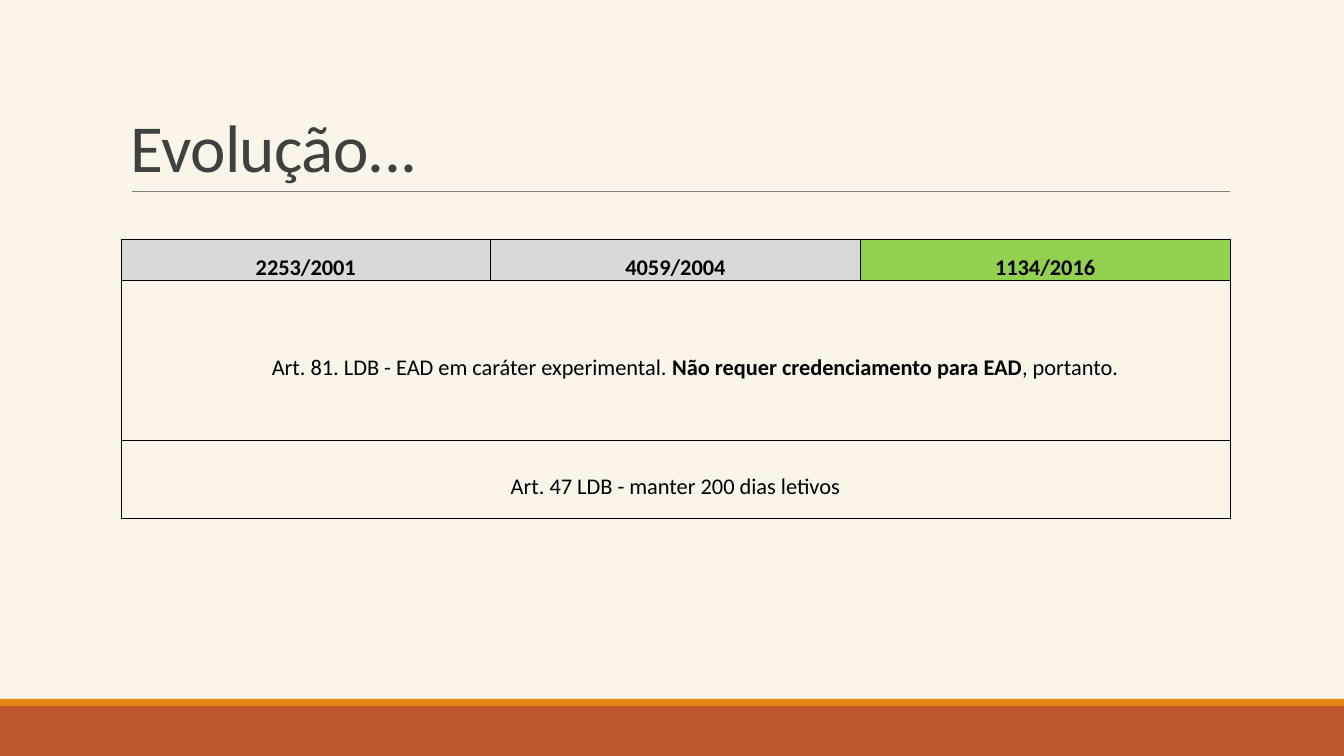
"""Build the slide comparing three ordinances under a title."""
from lxml import etree
from pptx import Presentation, util as u
from pptx.dml.color import RGBColor
from pptx.enum import shapes, text
from pptx.oxml.ns import qn

BACKGROUND = RGBColor(0xFA, 0xF5, 0xE8)
RUST = RGBColor(0xBD, 0x58, 0x2C)
ORANGE = RGBColor(0xE4, 0x83, 0x12)
RULE_GRAY = RGBColor(0x80, 0x80, 0x80)
TITLE_GRAY = RGBColor(0x40, 0x40, 0x40)
HEADER_GRAY = RGBColor(0xD9, 0xD9, 0xD9)
HEADER_GREEN = RGBColor(0x92, 0xD0, 0x50)
BLACK = RGBColor(0, 0, 0)

TITLE = "Evolução..."
HEADERS = [("2253/2001", HEADER_GRAY), ("4059/2004", HEADER_GRAY), ("1134/2016", HEADER_GREEN)]
ARTICLES = [
    {"indent": 39, "runs": [("Art. 81. LDB - EAD em caráter experimental. ", False),
                            ("Não requer credenciamento para EAD", True),
                            (", portanto.", False)]},
    {"indent": 0, "runs": [("Art. 47 LDB - manter 200 dias letivos", False)]},
]
BANDS = [(706, 50, RUST), (699, 7, ORANGE)]
ROW_HEIGHTS = [39, 160, 78]
LEFT, WIDTH, TABLE_TOP = 121, 1109, 239
TITLE_FORMAT = {"name": "Calibri", "size": u.Pt(48)}
CELL_FORMAT = {"name": "Calibri", "size": u.Pt(16)}
SCALE = 914400 / 100.8


def px(length):
    return u.Emu(round(length * SCALE))


def set_attributes(target, values):
    for name, value in values.items():
        setattr(target, name, value)


def add_run(paragraph, words, font_format, color):
    run = paragraph.add_run()
    run.text = words
    set_attributes(run.font, font_format)
    run.font.color.rgb = color
    return run


def add_borders(cell):
    properties = cell._tc.get_or_add_tcPr()
    for side in ("lnL", "lnR", "lnT", "lnB"):
        border = etree.SubElement(properties, qn(f"a:{side}"), w=str(u.Pt(0.5)))
        fill = etree.SubElement(border, qn("a:solidFill"))
        etree.SubElement(fill, qn("a:srgbClr"), val=str(BLACK))


def fill_cell(cell, runs, indent=0):
    set_attributes(cell, {"vertical_anchor": text.MSO_ANCHOR.MIDDLE, "margin_left": px(1),
                          "margin_right": px(1), "margin_top": px(1), "margin_bottom": 0})
    paragraph = cell.text_frame.paragraphs[0]
    set_attributes(paragraph, {"alignment": text.PP_ALIGN.CENTER, "line_spacing": 1.5})
    paragraph._p.get_or_add_pPr().set("marL", str(px(indent)))
    for words, bold in runs:
        add_run(paragraph, words, {**CELL_FORMAT, "bold": bold}, BLACK)


def add_background(slide):
    slide.background.fill.solid()
    slide.background.fill.fore_color.rgb = BACKGROUND
    for top, height, color in BANDS:
        band = slide.shapes.add_shape(shapes.MSO_SHAPE.RECTANGLE, 0, px(top), px(1344), px(height))
        band.shadow.inherit = False
        band.fill.solid()
        band.fill.fore_color.rgb = color
        band.line.fill.background()
    rule = slide.shapes.add_connector(shapes.MSO_CONNECTOR.STRAIGHT,
                                      px(132), px(191), px(1230), px(191))
    rule.line.color.rgb = RULE_GRAY
    rule.line.width = u.Pt(0.5)
    etree.SubElement(rule._element.spPr, qn("a:effectLst"))


def add_title(slide):
    frame = slide.shapes.add_textbox(px(LEFT), px(31), px(WIDTH), px(160)).text_frame
    set_attributes(frame, {"word_wrap": True, "vertical_anchor": text.MSO_ANCHOR.BOTTOM})
    paragraph = frame.paragraphs[0]
    paragraph.line_spacing = 0.85
    run = add_run(paragraph, TITLE, TITLE_FORMAT, TITLE_GRAY)
    run._r.get_or_add_rPr().set("spc", "-50")


def add_table(slide):
    table = slide.shapes.add_table(len(ROW_HEIGHTS), len(HEADERS), px(LEFT), px(TABLE_TOP),
                                   px(WIDTH), px(sum(ROW_HEIGHTS))).table
    set_attributes(table, {"first_row": False, "horz_banding": False})
    for column in table.columns:
        column.width = px(WIDTH / len(HEADERS))
    for row, height in zip(table.rows, ROW_HEIGHTS):
        row.height = px(height)
    for cell in table.iter_cells():
        add_borders(cell)
        cell.fill.background()
    for index, (label, color) in enumerate(HEADERS):
        cell = table.cell(0, index)
        fill_cell(cell, [(label, True)])
        cell.fill.solid()
        cell.fill.fore_color.rgb = color
    for index, article in enumerate(ARTICLES, start=1):
        cell = table.cell(index, 0)
        cell.merge(table.cell(index, len(HEADERS) - 1))
        fill_cell(cell, **article)


def main():
    presentation = Presentation()
    set_attributes(presentation, {"slide_width": px(1344), "slide_height": px(756)})
    slide = presentation.slides.add_slide(presentation.slide_layouts[6])
    add_background(slide)
    add_title(slide)
    add_table(slide)
    presentation.save("out.pptx")


if __name__ == "__main__":
    main()
